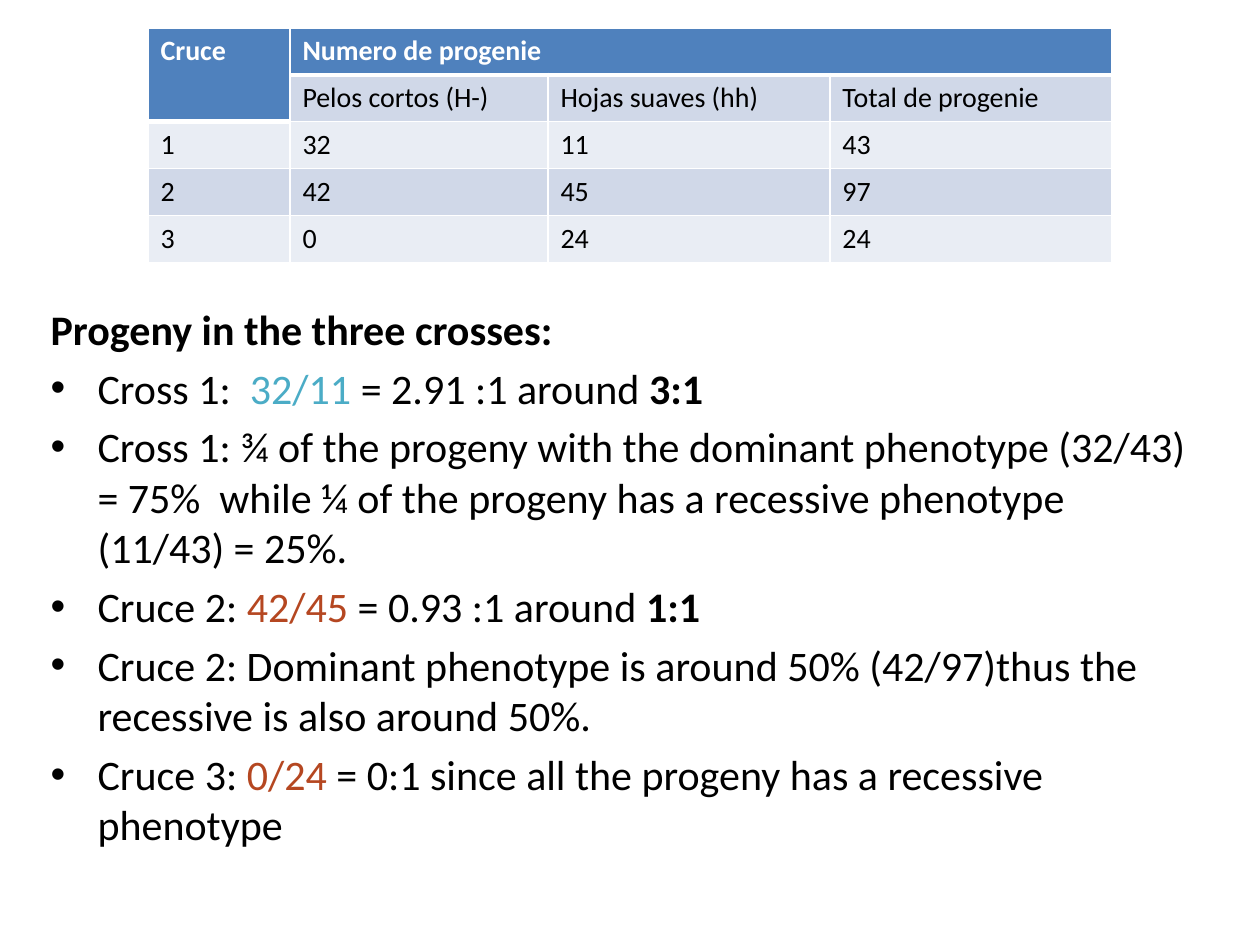
import dataclasses

import pptx
import pptx.dml.color
import pptx.enum.text
import pptx.oxml
import pptx.oxml.ns
import pptx.util


@dataclasses.dataclass(frozen=True)
class Theme:
    font: str = "Calibri"
    body_size: int = 24
    table_size: int = 16
    ink: str = "000000"
    white: str = "FFFFFF"
    header: str = "4F81BD"
    bands: tuple = ("E9EDF4", "D0D8E8")
    teal: str = "4BACC6"
    rust: str = "B54721"


THEME = Theme()
EMU_PER_PX = 914400 / 126

TABLE_ROWS = [
    ["Cruce", "Numero de progenie", "", ""],
    ["", "Pelos cortos (H-)", "Hojas suaves (hh)", "Total de progenie"],
    ["1", "32", "11", "43"],
    ["2", "42", "45", "97"],
    ["3", "0", "24", "24"],
]
MERGES = [((0, 0), (1, 0)), ((0, 1), (0, 3))]

BOLD = {"bold": True}
TEAL = {"color": THEME.teal}
RUST = {"color": THEME.rust}
HEADING = [("Progeny in the three crosses:", BOLD)]
BULLETS = [
    [("Cross 1:  ", {}), ("32/11 ", TEAL), ("= 2.91 :1 around ", {}), ("3:1", BOLD)],
    [("Cross 1: ¾ of the progeny with the dominant phenotype (32/43) = 75%  while "
      "¼ of the progeny has a recessive phenotype (11/43) = 25%.", {})],
    [("Cruce 2: ", {}), ("42/45 ", RUST), ("= 0.93 :1 around ", {}), ("1:1", BOLD)],
    [("Cruce 2: Dominant phenotype is around 50% (42/97)thus the recessive is also "
      "around 50%.", {})],
    [("Cruce 3: ", {}), ("0/24 ", RUST),
     ("= 0:1 since all the progeny has a recessive phenotype", {})],
]


def px(length):
    return pptx.util.Emu(round(length * EMU_PER_PX))


def rgb(color):
    return pptx.dml.color.RGBColor.from_string(color)


class SlideBuilder:
    def __init__(self, slide, theme):
        self.slide = slide
        self.theme = theme

    def span(self, para, text, size, color=None, bold=False):
        span = para.add_run()
        span.text = text
        style = {"name": self.theme.font, "size": pptx.util.Pt(size), "bold": bold}
        for name, value in style.items():
            setattr(span.font, name, value)
        span.font.color.rgb = rgb(color or self.theme.ink)

    def borders(self, cell, top, bottom):
        """Draw the cell's edges in white; widths are in points."""
        properties = cell._tc.get_or_add_tcPr()
        for edge, width in {"L": 1, "R": 1, "T": top, "B": bottom}.items():
            properties.append(pptx.oxml.parse_xml(
                f'<a:ln{edge} {pptx.oxml.ns.nsdecls("a")} w="{pptx.util.Pt(width)}">'
                f'<a:solidFill><a:srgbClr val="{self.theme.white}"/></a:solidFill>'
                f'</a:ln{edge}>'))

    def table(self, left, top, widths, row_height, rows, merges):
        frame = self.slide.shapes.add_table(
            len(rows), len(widths), px(left), px(top),
            px(sum(widths)), px(row_height * len(rows)))
        table = frame.table
        for column, width in zip(table.columns, widths):
            column.width = px(width)
        for start, end in merges:
            table.cell(*start).merge(table.cell(*end))
        for r, row in enumerate(rows):
            table.rows[r].height = px(row_height)
            for c, text in enumerate(row):
                cell = table.cell(r, c)
                last_header_row = 1 if c == 0 else 0
                is_header = r <= last_header_row
                self.borders(cell, top=3 if r == last_header_row + 1 else 1,
                             bottom=3 if r == last_header_row else 1)
                cell.fill.solid()
                fill = self.theme.header if is_header else self.theme.bands[r % 2]
                cell.fill.fore_color.rgb = rgb(fill)
                if text:
                    color = self.theme.white if is_header else self.theme.ink
                    self.span(cell.text_frame.paragraphs[0], text,
                              self.theme.table_size, color, is_header)

    def body(self, left, top, width, height, heading, bullets):
        """Fill the body placeholder with an unbulleted heading and a list."""
        box = self.slide.placeholders[1]
        place = {"left": left, "top": top, "width": width, "height": height}
        for name, value in place.items():
            setattr(box, name, px(value))
        frame = box.text_frame
        frame.word_wrap = True
        frame.auto_size = pptx.enum.text.MSO_AUTO_SIZE.NONE
        for index, parts in enumerate([heading, *bullets]):
            para = frame.paragraphs[0] if index == 0 else frame.add_paragraph()
            properties = para._p.get_or_add_pPr()
            if index == 0:
                properties.set("marL", "0")
                properties.set("indent", "0")
                properties.append(pptx.oxml.parse_xml(
                    f'<a:buNone {pptx.oxml.ns.nsdecls("a")}/>'))
                para.space_before = pptx.util.Pt(0)
            else:
                properties.set("marL", str(px(47)))
                properties.set("indent", str(-px(47)))
                properties.append(pptx.oxml.parse_xml(
                    f'<a:buChar {pptx.oxml.ns.nsdecls("a")} char="•"/>'))
                para.space_before = pptx.util.Pt(self.theme.body_size * 0.2)
            for text, style in parts:
                self.span(para, text, self.theme.body_size, **style)


def main():
    deck = pptx.Presentation()
    deck.slide_width, deck.slide_height = px(1260), px(945)
    page = deck.slides.add_slide(deck.slide_layouts.get_by_name("Title and Content"))
    title = page.shapes.title.element
    title.getparent().remove(title)

    builder = SlideBuilder(page, THEME)
    builder.body(38, 297, 1173, 645, HEADING, BULLETS)
    builder.table(148, 28, [142, 258, 282, 282], 46, TABLE_ROWS, MERGES)
    deck.save("out.pptx")


if __name__ == "__main__":
    main()
